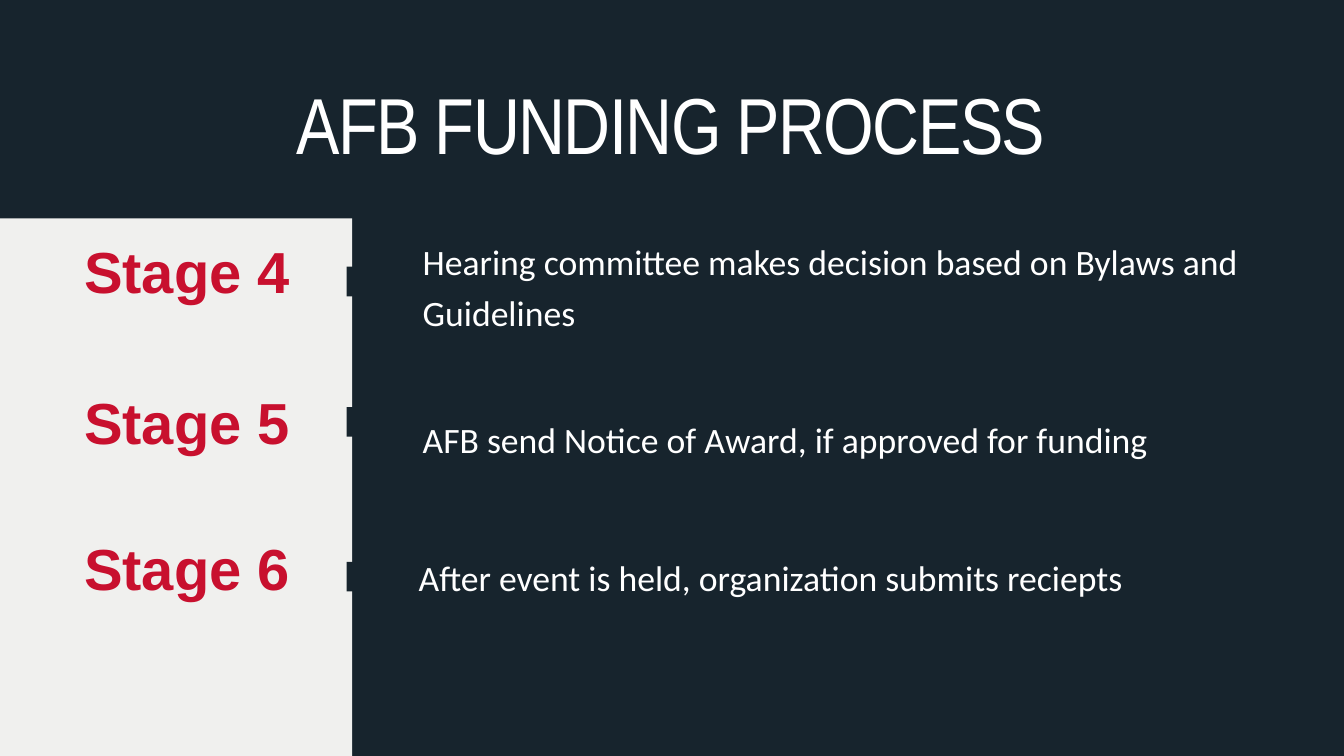
from dataclasses import dataclass

from pptx import Presentation
from pptx.dml.color import RGBColor
from pptx.enum.shapes import MSO_SHAPE
from pptx.enum.text import MSO_ANCHOR, MSO_AUTO_SIZE, PP_ALIGN
from pptx.shapes.autoshape import Shape
from pptx.slide import Slide
from pptx.util import Pt

NAVY = RGBColor(0x17, 0x24, 0x2D)
OFF_WHITE = RGBColor(0xF0, 0xF0, 0xEE)
RED = RGBColor(0xC8, 0x10, 0x2E)
WHITE = RGBColor(0xFF, 0xFF, 0xFF)


@dataclass(frozen=True)
class TextStyle:
    font: str
    size: float
    line_spacing: float
    color: RGBColor
    align: PP_ALIGN
    bold: bool = False


@dataclass(frozen=True)
class Box:
    left: float
    top: float
    width: float
    height: float


@dataclass(frozen=True)
class Stage:
    label: str
    label_top: float
    marker_top: float
    description: str
    description_box: Box


TITLE_STYLE = TextStyle("Arial Narrow", 85, 102, WHITE, PP_ALIGN.CENTER)
LABEL_STYLE = TextStyle("Arial", 62, 74.4, RED, PP_ALIGN.CENTER, bold=True)
DESCRIPTION_STYLE = TextStyle("Calibri", 38.2, 54.2, WHITE, PP_ALIGN.LEFT)

STAGES = [
    Stage("Stage 4", 252, 285.8,
          "Hearing committee makes decision based on Bylaws and Guidelines",
          Box(452.9, 249.1, 878.4, 112.3)),
    Stage("Stage 5", 414.7, 436.3,
          "AFB send Notice of Award, if approved for funding",
          Box(452.9, 439.2, 878.4, 58.3)),
    Stage("Stage 6", 571, 601.9,
          "After event is held, organization submits reciepts",
          Box(448.6, 587.5, 878.4, 58.3)),
]


def write_text(shape: Shape, text: str, style: TextStyle) -> None:
    frame = shape.text_frame
    frame.text = text
    frame.word_wrap = True
    frame.auto_size = MSO_AUTO_SIZE.SHAPE_TO_FIT_TEXT
    frame.vertical_anchor = MSO_ANCHOR.TOP
    frame.margin_left = frame.margin_right = Pt(0)
    frame.margin_top = frame.margin_bottom = Pt(0)
    paragraph = frame.paragraphs[0]
    paragraph.alignment = style.align
    paragraph.line_spacing = Pt(style.line_spacing)
    paragraph.space_before = Pt(0)
    font = paragraph.runs[0].font
    font.name = style.font
    font.size = Pt(style.size)
    font.bold = style.bold
    font.color.rgb = style.color


def add_text(slide: Slide, box: Box, text: str, style: TextStyle) -> None:
    text_box = slide.shapes.add_textbox(
        Pt(box.left), Pt(box.top), Pt(box.width), Pt(box.height))
    write_text(text_box, text, style)


def add_block(slide: Slide, box: Box, color: RGBColor) -> None:
    """Add a plain filled rectangle without outline."""
    block = slide.shapes.add_shape(
        MSO_SHAPE.RECTANGLE,
        Pt(box.left), Pt(box.top), Pt(box.width), Pt(box.height))
    block.shadow.inherit = False
    block.fill.solid()
    block.fill.fore_color.rgb = color
    block.line.fill.background()


def format_title(title: Shape) -> None:
    title.left, title.top = Pt(78.5), Pt(80.6)
    title.width, title.height = Pt(1280.2), Pt(101.5)
    write_text(title, "AFB FUNDING PROCESS", TITLE_STYLE)
    run = title.text_frame.paragraphs[0].runs[0]
    run.font._element.set("spc", "-170")


def add_stage(slide: Slide, stage: Stage) -> None:
    add_block(slide, Box(371.5, stage.marker_top, 31.7, 31.7), NAVY)
    add_text(slide, Box(80.6, stage.label_top, 239.8, 84.2),
             stage.label, LABEL_STYLE)
    add_text(slide, stage.description_box, stage.description,
             DESCRIPTION_STYLE)


def main() -> None:
    presentation = Presentation()
    presentation.slide_width = Pt(1440)
    presentation.slide_height = Pt(810)
    slide = presentation.slides.add_slide(presentation.slide_layouts[5])
    slide.background.fill.solid()
    slide.background.fill.fore_color.rgb = NAVY

    format_title(slide.shapes.title)
    add_block(slide, Box(0, 234, 377.3, 779.8), OFF_WHITE)
    for stage in STAGES:
        add_stage(slide, stage)

    presentation.save("out.pptx")


if __name__ == "__main__":
    main()
